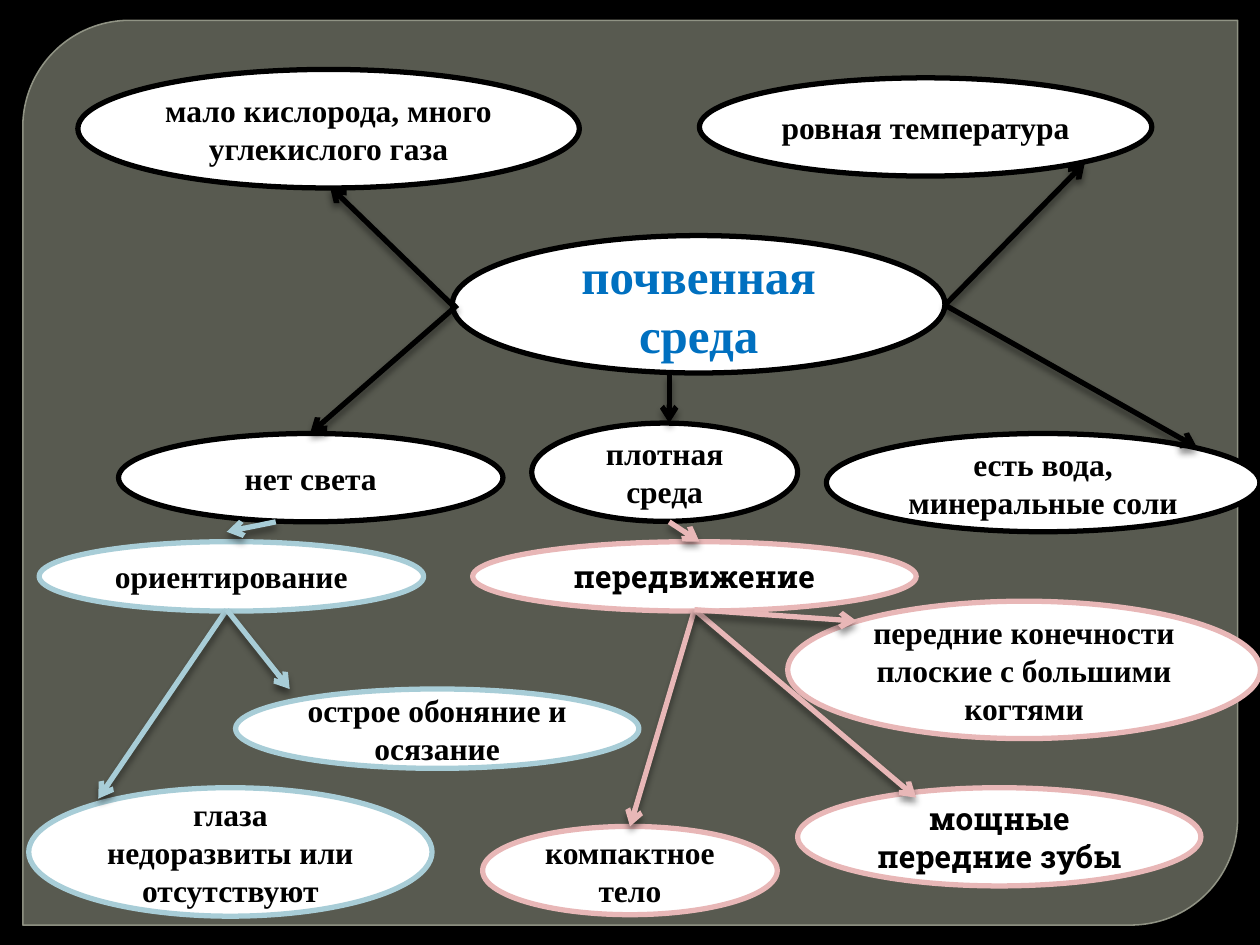
from lxml.etree import SubElement
from pptx import Presentation
from pptx.dml.color import RGBColor
from pptx.enum.shapes import MSO_CONNECTOR as Link, MSO_SHAPE as Form
from pptx.enum.text import MSO_ANCHOR as Anchor, PP_ALIGN as Align
from pptx.oxml import parse_xml
from pptx.oxml.ns import nsdecls, qn
from pptx.util import Cm, Pt

BLACK, WHITE, BLUE, PINK = "000000", "FFFFFF", "A8CDD7", "E8B7B7"
TIMES, SLAB = "Times New Roman", "Roboto Slab"

# text, left, top, width, height, outline, font
OVALS = [
    ("мало кислорода, много углекислого газа", 1.57, 1.4, 10.11, 2.39, BLACK, TIMES),
    ("ровная температура", 14.1, 1.57, 9.12, 1.98, BLACK, TIMES),
    ("нет света", 2.39, 8.74, 7.75, 1.78, BLACK, TIMES),
    ("плотная среда", 10.72, 8.53, 5.36, 1.98, BLACK, TIMES),
    ("есть вода, минеральные соли", 16.66, 8.74, 8.74, 1.98, BLACK, TIMES),
    ("ориентирование", 0.79, 10.92, 7.75, 1.4, BLUE, TIMES),
    ("глаза недоразвиты или отсутствуют", 0.58, 15.88, 8.13, 2.59, BLUE, TIMES),
    ("острое обоняние и осязание", 4.75, 13.89, 8.13, 1.6, BLUE, TIMES),
    ("передние конечности плоские с большими когтями",
     15.88, 12.12, 9.53, 2.77, PINK, TIMES),
    ("передвижение", 9.53, 10.92, 8.94, 1.4, PINK, SLAB),
    ("мощные передние зубы", 16.08, 15.88, 8.13, 1.98, PINK, SLAB),
    ("компактное тело", 9.73, 16.66, 5.94, 1.78, PINK, TIMES),
]

# colour, start, ends
FANS = [
    (BLACK, (9.12, 6.15), [(6.65, 3.76)]),
    (BLACK, (9.22, 6.15), [(6.25, 8.74)]),
    (BLACK, (19.05, 6.15), [(21.87, 3.28), (24.13, 9.02)]),
    (BLACK, (13.49, 7.54), [(13.49, 8.53)]),
    (BLUE, (5.56, 10.52), [(4.57, 10.72)]),
    (BLUE, (4.57, 12.29), [(1.98, 16.1), (5.84, 13.89)]),
    (PINK, (13.49, 10.52), [(14.1, 10.92)]),
    (PINK, (14, 12.29), [(12.7, 16.66), (18.47, 16.08), (17.27, 12.52)]),
]

SHADOW = f"""<a:effectLst {nsdecls("a")}>
  <a:outerShdw blurRad="50800" dist="38100" dir="5400000" rotWithShape="0">
    <a:srgbClr val="000000"><a:alpha val="43000"/></a:srgbClr>
  </a:outerShdw>
</a:effectLst>"""


def paint(fill, tone, alpha=100):
    """Give a fill a solid colour, with its opacity in percent."""
    fill.solid()
    fill.fore_color.rgb = RGBColor.from_string(tone)
    if alpha < 100:
        clr = fill._xPr.find(qn("a:solidFill"))[0]
        SubElement(clr, qn("a:alpha")).set("val", str(alpha * 1000))


def add_form(slide, form, box, tone, edge, width, alpha=100, rim=100):
    shape = slide.shapes.add_shape(form, *map(Cm, box))
    shape.shadow.inherit = False
    paint(shape.fill, tone, alpha)
    paint(shape.line.fill, edge, rim)
    shape.line.width = Pt(width)
    return shape


def add_panel(slide):
    box = (0.46, 0.41, 24.49, 18.24)
    panel = add_form(slide, Form.ROUND_2_DIAG_RECTANGLE, box,
                     "888B7B", "9DA090", 0.87, 65, 88)
    panel.adjustments[0] = 0.118
    panel.adjustments[1] = 0


def add_oval(slide, text, *box, edge, font, size=18, tone=BLACK):
    frame = add_form(slide, Form.OVAL, box, WHITE, edge, 3).text_frame
    frame.word_wrap = True
    frame.vertical_anchor = Anchor.MIDDLE
    para = frame.paragraphs[0]
    para.alignment = Align.CENTER
    run = para.add_run()
    run.text = text
    run.font.name = font
    run.font.size = Pt(size)
    run.font.bold = True
    paint(run.font.fill, tone)


def add_arrow(slide, start, end, tone):
    arrow = slide.shapes.add_connector(Link.STRAIGHT, *map(Cm, start + end))
    paint(arrow.line.fill, tone)
    arrow.line.width = Pt(3)
    SubElement(arrow.line._get_or_add_ln(), qn("a:tailEnd")).set("type", "arrow")
    arrow._element.spPr.append(parse_xml(SHADOW))


def main():
    deck = Presentation()
    deck.slide_width, deck.slide_height = Cm(25.4), Cm(19.05)
    slide = deck.slides.add_slide(deck.slide_layouts[6])
    paint(slide.background.fill, BLACK)
    add_panel(slide)
    add_oval(slide, "почвенная среда", 9.12, 4.75, 9.93, 2.77,
             edge=BLACK, font=TIMES, size=28, tone="0070C0")
    for text, *box, edge, font in OVALS:
        add_oval(slide, text, *box, edge=edge, font=font)
    for tone, start, ends in FANS:
        for end in ends:
            add_arrow(slide, start, end, tone)
    deck.save("out.pptx")


if __name__ == "__main__":
    main()
